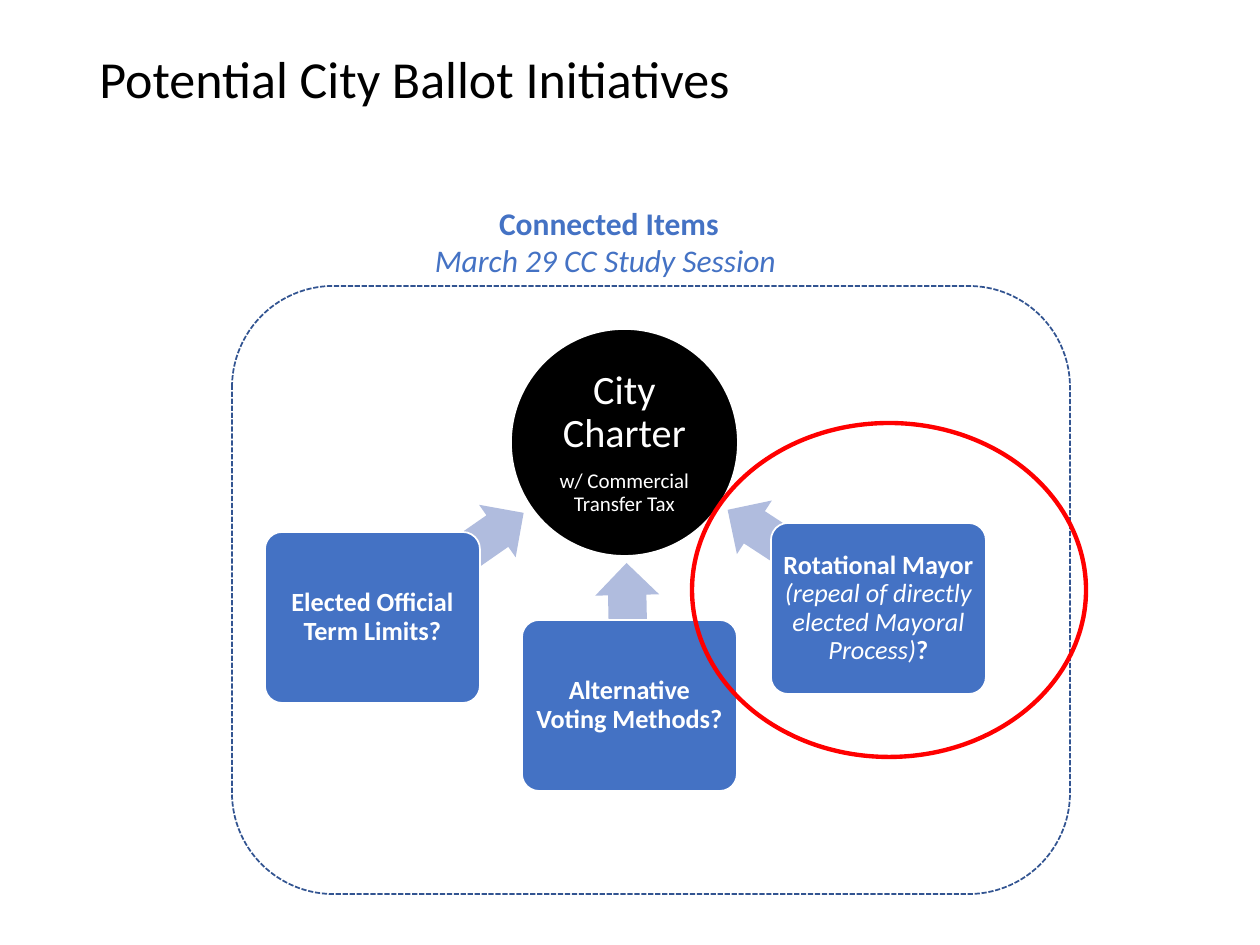
from pptx import Presentation, util as u
from pptx.dml.color import RGBColor
from pptx.enum import dml, shapes, text

PX = 914400 / 126
HUE = {"ink": "000000", "paper": "FFFFFF", "blue": "4472C4",
       "navy": "325491", "pale": "B0BCDE", "red": "FF0000"}
KIND = shapes.MSO_SHAPE
MID = text.PP_ALIGN.CENTER

deck = Presentation()
deck.slide_width, deck.slide_height = int(1260 * PX), int(945 * PX)
slide = deck.slides.add_slide(deck.slide_layouts[6])


def draw(kind, box, fill=None, line=None, width=1):
    """Add a preset shape, or a text box if kind is None; box is in px."""
    area = [int(n * PX) for n in box]
    if kind is None:
        return slide.shapes.add_textbox(*area)
    shape = slide.shapes.add_shape(kind, *area)
    shape.shadow.inherit = False
    if fill:
        shape.fill.solid()
        shape.fill.fore_color.rgb = RGBColor.from_string(HUE[fill])
    else:
        shape.fill.background()
    if line:
        shape.line.color.rgb = RGBColor.from_string(HUE[line])
        shape.line.width = u.Pt(width)
    else:
        shape.line.fill.background()
    return shape


def write(shape, paras, hue, pad=None, align=MID, lead=0.9, gap=0):
    """Fill a shape with paragraphs, each a list of (words, size, style) runs."""
    frame = shape.text_frame
    frame.word_wrap = True
    frame.vertical_anchor = text.MSO_ANCHOR.MIDDLE
    if pad is not None:
        frame.margin_left = frame.margin_right = int(pad * PX)
        frame.margin_top = frame.margin_bottom = int(pad * PX)
    for i, runs in enumerate(paras):
        para = frame.add_paragraph() if i else frame.paragraphs[0]
        para.alignment = align
        para.line_spacing = lead
        para.space_before = u.Pt(gap if i else 0)
        for words, size, style in runs:
            run = para.add_run()
            run.text = words
            font = run.font
            font.name, font.size = "Calibri", u.Pt(size)
            font.bold, font.italic = style == "b", style == "i"
            font.color.rgb = RGBColor.from_string(HUE[hue])


title = draw(None, (87, 50, 1086, 64))
write(title, [[("Potential City Ballot Initiatives", 29.7, "")]], "ink",
      align=text.PP_ALIGN.LEFT)

frame = draw(KIND.FLOWCHART_ALTERNATE_PROCESS, (232, 286, 838, 608), line="navy")
frame.line.dash_style = dml.MSO_LINE.SQUARE_DOT

hub = draw(KIND.OVAL, (511, 329, 227, 227), "ink", "paper")
write(hub, [[("City Charter", 23, "")], [("w/ Commercial Transfer Tax", 12, "")]],
      "paper", pad=3, gap=8)

# arrow box, arrow turn, card corner, card runs
items = [
    ((357, 533, 183, 64), 145.2, (265, 532),
     [("Elected Official Term Limits?", 15, "b")]),
    ((557, 602, 142, 64), 88.8, (522, 620),
     [("Alternative Voting Methods?", 15, "b")]),
    ((713, 527, 180, 64), 33.1, (771, 523),
     [("Rotational Mayor ", 15, "b"),
      ("(repeal of directly elected Mayoral Process)", 15, "i"),
      ("?", 15, "b")]),
]
for box, turn, spot, runs in items:
    arrow = draw(KIND.LEFT_ARROW, box, "pale")
    arrow.rotation = turn
    arrow.adjustments[0] = 0.6
    arrow.adjustments[1] = 0.5
    card = draw(KIND.ROUNDED_RECTANGLE, (*spot, 215, 171), "blue", "paper")
    card.adjustments[0] = 0.1
    write(card, [runs], "paper", pad=4)

label = draw(None, (407, 197, 404, 89))
write(label, [[("Connected Items", 18, "b")],
              [("March 29 CC Study Session ", 18, "i")]], "blue", lead=1.0)

draw(KIND.OVAL, (692, 423, 394, 334), line="red", width=2.5)

deck.save("out.pptx")
